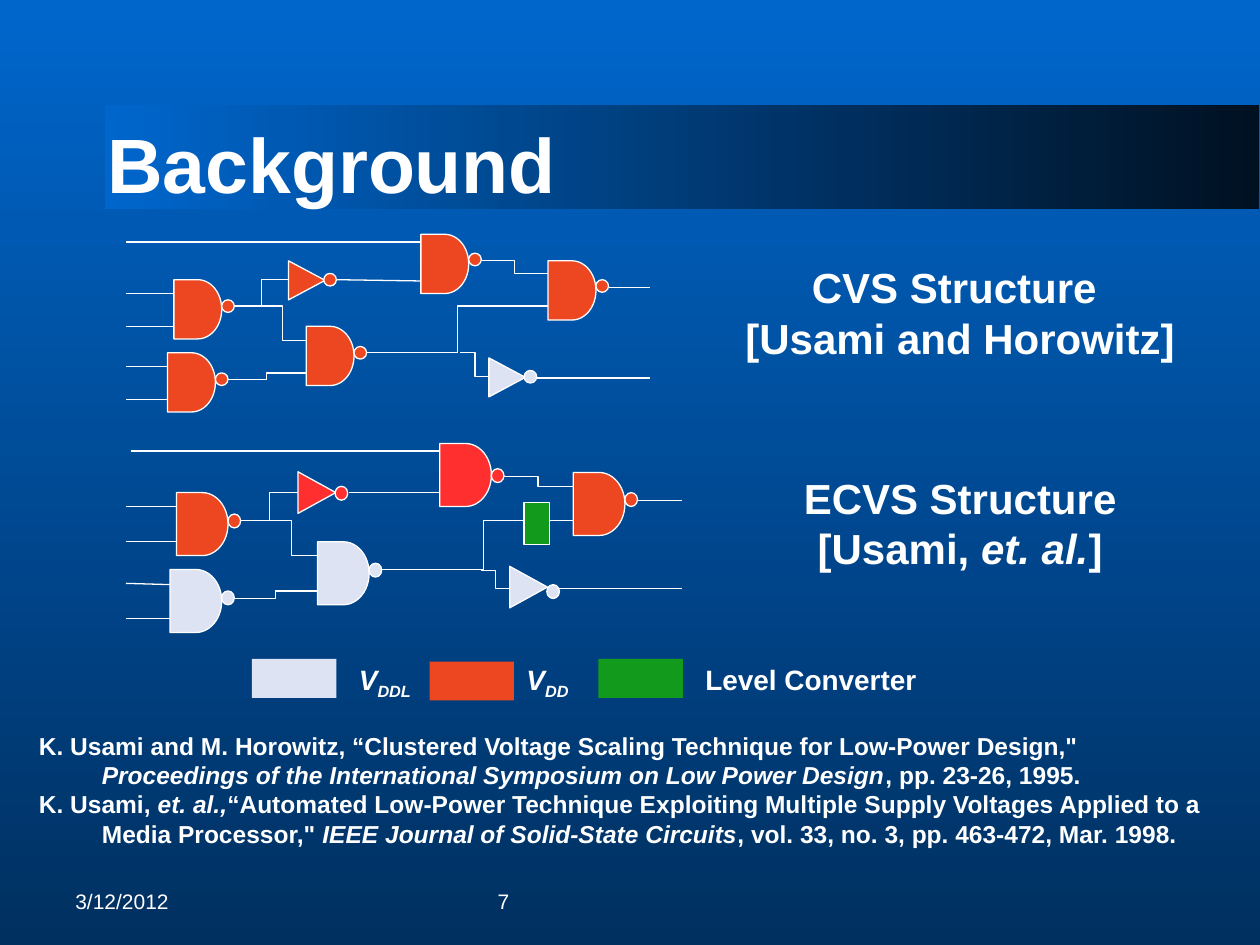
from lxml import etree
from pptx import Presentation
from pptx.dml.color import RGBColor
from pptx.enum.shapes import MSO_CONNECTOR as LINK, MSO_SHAPE as SHAPE
from pptx.enum.text import MSO_ANCHOR as ANCHOR, PP_ALIGN as ALIGN
from pptx.oxml.ns import qn
from pptx.util import Inches, Pt

WHITE, LOW, HIGH = "FFFFFF", "DDE3F3", "ED4722"
RED, GREEN, BLUE = "FF2F2F", "119A1B", "0066CC"
rgb = RGBColor.from_string


def add_block(kind, box, colour, outlined=True):
    block = slide.shapes.add_shape(kind, *map(Inches, box))
    block.shadow.inherit = False
    block.fill.solid()
    block.fill.fore_color.rgb = rgb(colour)
    if outlined:
        block.line.color.rgb = rgb(WHITE)
        block.line.width = Pt(0.75)
    else:
        block.line.fill.background()
    return block


def add_text(box, paragraphs, size, align=ALIGN.LEFT, anchor=ANCHOR.TOP, bold=True, hanging=0):
    """Each paragraph is a list of (text, font attributes) pairs."""
    frame = slide.shapes.add_textbox(*map(Inches, box)).text_frame
    frame.word_wrap = True
    frame.vertical_anchor = anchor
    for i, runs in enumerate(paragraphs):
        paragraph = frame.add_paragraph() if i else frame.paragraphs[0]
        paragraph.alignment = align
        if hanging:
            margins = paragraph._p.get_or_add_pPr()
            margins.set("marL", str(Inches(hanging)))
            margins.set("indent", str(-Inches(hanging)))
        for text, extra in runs:
            run = paragraph.add_run()
            run.text = text
            style = {"name": "Arial", "size": Pt(size), "bold": bold, **extra}
            for attribute, value in style.items():
                setattr(run.font, attribute, value)
            run.font.color.rgb = rgb(WHITE)
    return frame


prs = Presentation()
prs.slide_width, prs.slide_height = Inches(10), Inches(7.5)
slide = prs.slides.add_slide(prs.slide_layouts[5])

# Background and title band
band = add_block(SHAPE.RECTANGLE, (0.83, 0.83, 9.16, 0.83), BLUE, outlined=False)
for fill, end_colour, angle in ((slide.background.fill, "003060", 270), (band.fill, "001122", 0)):
    fill.gradient()
    fill.gradient_angle = angle
    for stop, colour, position in zip(fill.gradient_stops, (BLUE, end_colour), (0, 1)):
        stop.color.rgb = rgb(colour)
        stop.position = position

title = slide.shapes.title
title.left, title.top, title.width, title.height = map(Inches, (0.75, 0.67, 8.5, 1.25))
slide.shapes._spTree.append(title._element)  # bring in front of the band
title.text_frame.text = "Background"
title.text_frame.vertical_anchor = ANCHOR.MIDDLE
heading = title.text_frame.paragraphs[0]
heading.alignment = ALIGN.LEFT
for attribute, value in {"name": "Arial", "size": Pt(44), "bold": True}.items():
    setattr(heading.font, attribute, value)
heading.font.color.rgb = rgb(WHITE)

ITALIC = {"italic": True}
add_text((5.66, 2.03, 3.92, 0.91),
         [[("CVS Structure ", {})], [("[Usami and Horowitz]", {})]], 24, ALIGN.CENTER)
add_text((6.16, 3.7, 2.92, 0.91),
         [[("ECVS Structure [Usami, ", {}), ("et. al.", ITALIC), ("]", {})]], 24, ALIGN.CENTER)

# Straight wires: x1, y1, x2, y2
straight_wires = [
    (1, 1.92, 3.34, 1.92), (1, 2.33, 1.38, 2.33), (1, 2.59, 1.38, 2.59),
    (1, 2.91, 1.33, 2.91), (1, 3.17, 1.33, 3.17), (2.67, 2.22, 3.34, 2.23),
    (4.25, 3, 5.16, 3), (4.83, 2.28, 5.16, 2.28),
    (1.04, 3.58, 3.5, 3.58), (1, 4.02, 1.4, 4.02), (1, 4.3, 1.4, 4.3),
    (1, 4.63, 1.35, 4.64), (1, 4.91, 1.35, 4.91), (2.77, 3.91, 3.49, 3.91),
    (4.44, 4.67, 5.41, 4.67), (5.06, 3.97, 5.41, 3.97),
]
bent_wires = [
    (1.86, 2.43, 2.29, 2.22), (2.05, 2.43, 2.43, 2.7), (3.82, 2.07, 4.35, 2.17),
    (2.91, 2.8, 4.35, 2.43), (1.8, 3.01, 2.43, 2.96), (3.65, 2.8, 3.89, 2.99),
    (1.91, 4.13, 2.37, 3.91), (2.11, 4.13, 2.52, 4.41), (3.99, 3.78, 4.55, 3.86),
    (3.03, 4.52, 4.55, 4.13), (1.85, 4.75, 2.52, 4.69), (3.82, 4.53, 4.04, 4.67),
]
bend_shifts = {(3.03, 4.52, 4.55, 4.13): 53100}
for kind, wires in ((LINK.STRAIGHT, straight_wires), (LINK.ELBOW, bent_wires)):
    for ends in wires:
        wire = slide.shapes.add_connector(kind, *map(Inches, ends))
        wire.line.color.rgb = rgb(WHITE)
        wire.line.width = Pt(0.75)
        properties = wire._element.spPr
        etree.SubElement(properties, qn("a:effectLst"))
        if ends in bend_shifts:
            guides = properties.find(qn("a:prstGeom")).get_or_add_avLst()
            etree.SubElement(guides, qn("a:gd"), name="adj1", fmla=f"val {bend_shifts[ends]}")

# Gates: left, top, top of the output bubble, colour
circuits = [
    {"nand_size": (0.38, 0.47), "inverter_size": (0.31, 0.29), "bubble_size": (0.1, 0.1),
     "nands": [(1.38, 2.22, 2.38, HIGH), (4.35, 2.07, 2.22, HIGH), (3.34, 1.86, 2.01, HIGH),
               (1.33, 2.8, 2.96, HIGH), (2.43, 2.59, 2.75, HIGH)],
     "inverters": [(2.28, 2.08, 2.17, HIGH), (3.87, 2.85, 2.94, LOW)]},
    {"nand_size": (0.41, 0.5), "inverter_size": (0.33, 0.3), "bubble_size": (0.1, 0.11),
     "nands": [(1.4, 3.91, 4.08, HIGH), (4.55, 3.75, 3.91, HIGH), (3.49, 3.52, 3.72, RED),
               (1.35, 4.52, 4.69, LOW), (2.52, 4.3, 4.47, LOW)],
     "inverters": [(2.35, 3.76, 3.86, RED), (4.03, 4.51, 4.64, LOW)]},
]
for circuit in circuits:
    nand_size, inverter_size = circuit["nand_size"], circuit["inverter_size"]
    for kind, gates, size, bubble_offset, turn in (
            (SHAPE.FLOWCHART_DELAY, circuit["nands"], nand_size, nand_size[0], 0),
            (SHAPE.ISOSCELES_TRIANGLE, circuit["inverters"], inverter_size,
             inverter_size[0] - 0.02, 90)):
        for left, top, bubble_top, colour in gates:
            add_block(kind, (left, top, *size), colour).rotation = turn
            add_block(SHAPE.OVAL, (left + bubble_offset, bubble_top, *circuit["bubble_size"]), colour)
add_block(SHAPE.RECTANGLE, (4.16, 3.99, 0.2, 0.33), GREEN)

# Legend: swatch left and top, colour, label left and width, label, subscript
legend = [
    (2, 5.23, LOW, 2.75, 0.82, "V", "DDL"),
    (3.41, 5.25, HIGH, 4.08, 0.95, "V", "DD"),
    (4.75, 5.23, GREEN, 5.5, 2.17, "Level Converter", ""),
]
for left, top, colour, label_left, label_width, label, subscript in legend:
    add_block(SHAPE.RECTANGLE, (left, top, 0.67, 0.31), colour, outlined=False)
    slant = ITALIC if subscript else {}
    runs = [(text, slant) for text in (label, subscript) if text]
    frame = add_text((label_left, 5.21, label_width, 0.37), [runs], 16)
    for run in frame.paragraphs[0].runs[1:]:
        run._r.get_or_add_rPr().set("baseline", "-25000")

references = [
    [("K. Usami and M. Horowitz, “Clustered Voltage Scaling Technique for Low-Power Design,\" ", {}),
     ("Proceedings of the International Symposium on Low Power Design", ITALIC),
     (", pp. 23-26, 1995.", {})],
    [("K. Usami, ", {}), ("et. al.,", ITALIC),
     ("“Automated Low-Power Technique Exploiting Multiple Supply Voltages "
      "Applied to a Media Processor,\" ", {}),
     ("IEEE Journal of Solid-State Circuits", ITALIC),
     (", vol. 33, no. 3, pp. 463-472, Mar. 1998.", {})],
]
add_text((0.21, 5.75, 9.58, 1.04), references, 14, hanging=0.5)

for left, text, align in ((0.5, "3/12/2012", ALIGN.LEFT), (2.83, "7", ALIGN.CENTER)):
    add_text((left, 6.95, 2.33, 0.4), [[(text, {})]], 12, align, ANCHOR.MIDDLE, bold=False)

prs.save("out.pptx")
